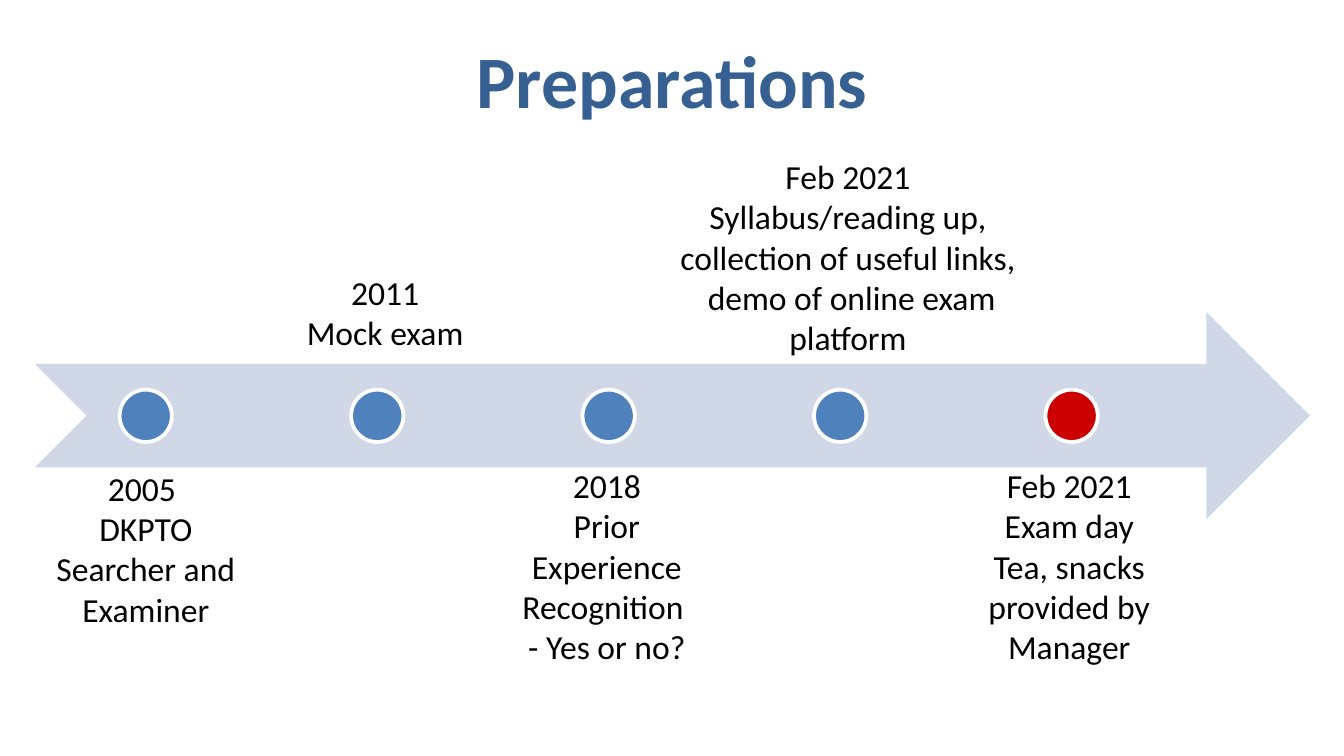
from dataclasses import dataclass

from pptx import Presentation
from pptx.dml.color import RGBColor
from pptx.enum.shapes import MSO_SHAPE
from pptx.enum.text import MSO_ANCHOR, PP_ALIGN
from pptx.slide import Slide
from pptx.util import Pt

COLORS = {
    "title": "376092",
    "text": "000000",
    "arrow": "D0D8E8",
    "step": "4F81BD",
    "exam": "CC0000",
    "outline": "FFFFFF",
}
FONT = "Calibri"
MARKER_LEFT, MARKER_TOP = 64.1, 208.8
MARKER_STEP, MARKER_SIZE = 124, 28


@dataclass
class Milestone:
    left: float
    top: float
    width: float
    height: float
    lines: list[str]
    color: str = "step"


MILESTONES = [
    Milestone(18.7, 247, 118.8, 123.8, ["2005 ", "DKPTO", "Searcher and Examiner"]),
    Milestone(146.9, 142.2, 118.8, 79.9, ["2011", "Mock exam"]),
    Milestone(265.7, 245.5, 118.8, 116.6,
              ["2018", "Prior Experience Recognition ", "- Yes or no?"]),
    Milestone(339.8, 79.9, 229, 145.4,
              ["Feb 2021", "Syllabus/reading up, collection of useful links,",
               " demo of online exam platform"]),
    Milestone(513.4, 245.5, 118.8, 138.2,
              ["Feb 2021 Exam day", "Tea, snacks provided by Manager"], "exam"),
]


def add_text(slide: Slide, left: float, top: float, width: float, height: float,
             lines: list[str], size: float, color: str, bold: bool = False,
             anchor: MSO_ANCHOR = MSO_ANCHOR.TOP) -> None:
    box = slide.shapes.add_textbox(Pt(left), Pt(top), Pt(width), Pt(height))
    frame = box.text_frame
    frame.word_wrap = True
    frame.vertical_anchor = anchor
    frame.text = "\n".join(lines)
    for paragraph in frame.paragraphs:
        paragraph.alignment = PP_ALIGN.CENTER
        for run in paragraph.runs:
            run.font.name = FONT
            run.font.size = Pt(size)
            run.font.bold = bold
            run.font.color.rgb = RGBColor.from_string(COLORS[color])


def add_arrow(slide: Slide) -> None:
    arrow = slide.shapes.add_shape(
        MSO_SHAPE.NOTCHED_RIGHT_ARROW, Pt(18.6), Pt(167.2), Pt(683.2), Pt(111))
    arrow.shadow.inherit = False
    arrow.fill.solid()
    arrow.fill.fore_color.rgb = RGBColor.from_string(COLORS["arrow"])
    arrow.line.fill.background()


def add_marker(slide: Slide, index: int, color: str) -> None:
    marker = slide.shapes.add_shape(
        MSO_SHAPE.OVAL, Pt(MARKER_LEFT + index * MARKER_STEP), Pt(MARKER_TOP),
        Pt(MARKER_SIZE), Pt(MARKER_SIZE))
    marker.shadow.inherit = False
    marker.fill.solid()
    marker.fill.fore_color.rgb = RGBColor.from_string(COLORS[color])
    marker.line.color.rgb = RGBColor.from_string(COLORS["outline"])
    marker.line.width = Pt(2)


def main() -> None:
    presentation = Presentation()
    presentation.slide_width = Pt(720)
    presentation.slide_height = Pt(405)
    slide = presentation.slides.add_slide(presentation.slide_layouts[6])

    add_text(slide, 54, 20.9, 612, 42.5, ["Preparations"], 39.6, "title",
             bold=True, anchor=MSO_ANCHOR.MIDDLE)
    add_arrow(slide)
    for index, milestone in enumerate(MILESTONES):
        add_marker(slide, index, milestone.color)
    for milestone in MILESTONES:
        add_text(slide, milestone.left, milestone.top, milestone.width,
                 milestone.height, milestone.lines, 18, "text")

    presentation.save("out.pptx")


if __name__ == "__main__":
    main()
